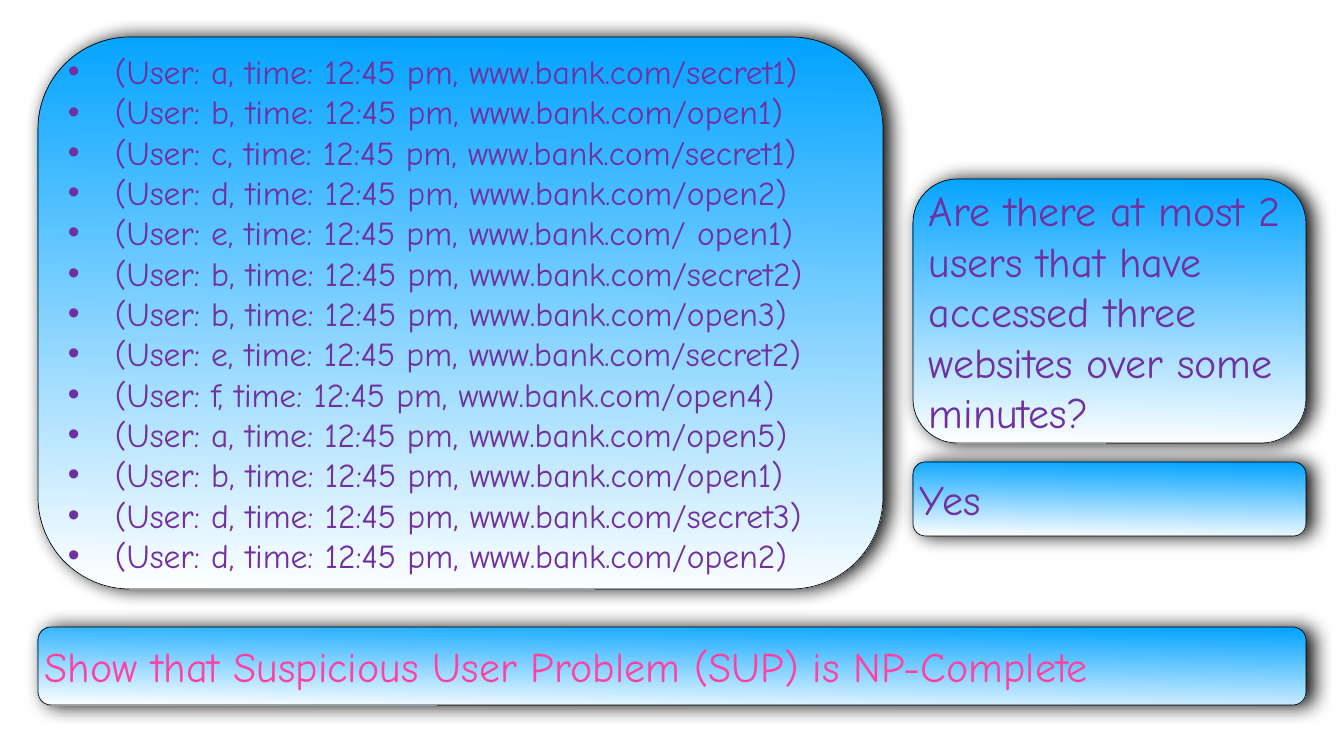
from lxml.etree import SubElement
from pptx import Presentation
from pptx.dml.color import RGBColor
from pptx.enum.shapes import MSO_SHAPE
from pptx.enum.text import MSO_ANCHOR, PP_ALIGN
from pptx.oxml.ns import qn
from pptx.util import Pt

ACCESSES = [
    ("a", "secret1"), ("b", "open1"), ("c", "secret1"), ("d", "open2"),
    ("e", " open1"), ("b", "secret2"), ("b", "open3"), ("e", "secret2"),
    ("f", "open4"), ("a", "open5"), ("b", "open1"), ("d", "secret3"),
    ("d", "open2"),
]
LOG = [f"(User: {user}, time: 12:45 pm, www.bank.com/{site})" for user, site in ACCESSES]
QUESTION = ["Are there at most 2 users that have accessed three websites over some minutes?"]
ANSWER = ["Yes"]
TASK = ["Show that Suspicious User Problem (SUP) is NP-Complete"]

THEME = {
    "font": "Comic Neue",
    "log_size": 48,
    "large_size": 60,
    "text": "7030A0",
    "task": "FF42A1",
    "gradient": ("00A2FF", "FFFFFF"),
    "outline": "000000",
}

EMU_PER_PX = 914400 / 50.4
LEFT, RIGHT, SIDE = 38, 1306, 913
INSET, INDENT = 3, 47

PANELS = [
    (LOG, (LEFT, 37, 883, 589), "log_size", "text", True),
    (QUESTION, (SIDE, 179, RIGHT, 443), "large_size", "text", False),
    (ANSWER, (SIDE, 462, RIGHT, 536), "large_size", "text", False),
    (TASK, (LEFT, 627, RIGHT, 705), "large_size", "task", False),
]


def px(length):
    return round(length * EMU_PER_PX)


def color(name):
    return RGBColor.from_string(name)


def apply(target, values):
    for name, value in values.items():
        setattr(target, name, value)


def add_shadow(box):
    effects = SubElement(box._element.spPr, qn("a:effectLst"))
    shadow = SubElement(effects, qn("a:outerShdw"), blurRad=str(Pt(28)),
                        dist=str(Pt(9)), dir="0", rotWithShape="0")
    shade = SubElement(shadow, qn("a:srgbClr"), val=THEME["outline"])
    SubElement(shade, qn("a:alpha"), val="97000")


def add_bullet(para):
    properties = para._p.get_or_add_pPr()
    properties.set("marL", str(px(INDENT)))
    properties.set("indent", str(-px(INDENT)))
    SubElement(properties, qn("a:buFont"), typeface="Arial")
    SubElement(properties, qn("a:buChar"), char="•")


def add_panel(page, lines, edges, size, ink, bulleted):
    left, top, right, bottom = edges
    box = page.shapes.add_shape(MSO_SHAPE.ROUNDED_RECTANGLE, px(left), px(top),
                                px(right - left), px(bottom - top))
    box.fill.gradient()
    box.fill.gradient_angle = 269
    for stop, shade, position in zip(box.fill.gradient_stops, THEME["gradient"], (0, 1)):
        apply(stop, {"position": position})
        stop.color.rgb = color(shade)
    box.line.color.rgb = color(THEME["outline"])
    box.line.width = Pt(1)
    add_shadow(box)

    frame = box.text_frame
    margins = {f"margin_{side}": px(INSET) for side in ("left", "top", "right", "bottom")}
    apply(frame, {"word_wrap": True, "vertical_anchor": MSO_ANCHOR.MIDDLE, **margins})
    for index, line in enumerate(lines):
        para = frame.add_paragraph() if index else frame.paragraphs[0]
        para.alignment = PP_ALIGN.LEFT
        if bulleted:
            add_bullet(para)
        span = para.add_run()
        span.text = line
        apply(span.font, {"name": THEME["font"], "size": Pt(THEME[size])})
        span.font.color.rgb = color(THEME[ink])


def main():
    deck = Presentation()
    apply(deck, {"slide_width": px(1344), "slide_height": px(756)})
    page = deck.slides.add_slide(deck.slide_layouts[6])
    for panel in PANELS:
        add_panel(page, *panel)
    deck.save("out.pptx")


if __name__ == "__main__":
    main()
